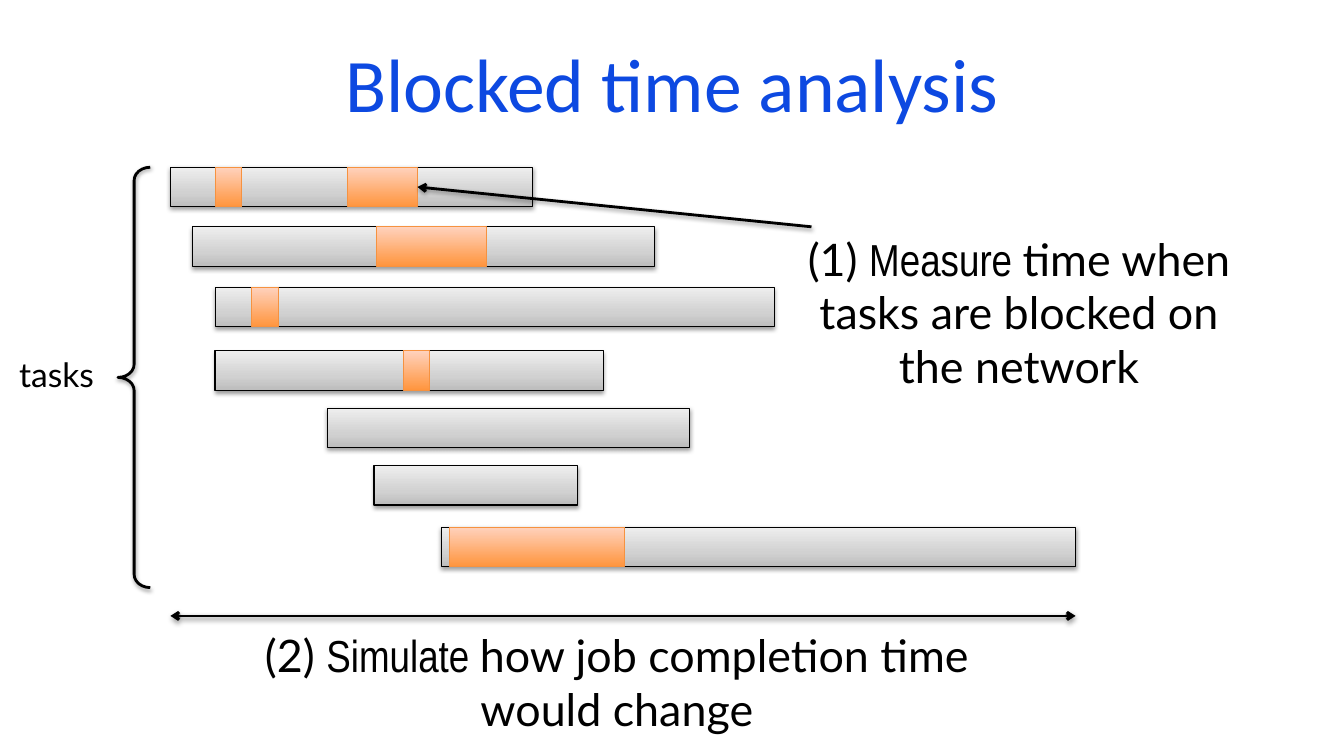
from dataclasses import dataclass

from lxml import etree
from pptx import Presentation
from pptx import util as u
from pptx.dml.color import RGBColor
from pptx.enum import shapes, text
from pptx.oxml.ns import qn

SLIDE_WIDTH, SLIDE_HEIGHT = u.Inches(13.33), u.Inches(7.5)
BAR_HEIGHT = 5.2


@dataclass(frozen=True)
class Gradient:
    stops: tuple[tuple[int, str], ...]
    outline: str


@dataclass(frozen=True)
class Theme:
    ink: str = "000000"
    title: str = "0D49E1"
    running: Gradient = Gradient(((0, "BDBDBD"), (35, "D1D1D1"), (100, "EEEEEE")), "000000")
    blocked: Gradient = Gradient(((0, "FF953E"), (100, "FFD2BD")), "F69240")
    body_font: str = "Lato"
    title_font: str = "Calibri"
    key_font: str = "Arial Narrow"
    title_size: int = 54
    body_size: int = 32
    label_size: int = 24
    thin: float = 0.75
    thick: float = 2


THEME = Theme()


@dataclass(frozen=True)
class Box:
    """A frame in percent of the slide's width and height."""
    left: float
    top: float
    width: float
    height: float


@dataclass(frozen=True)
class Span:
    left: float
    width: float


@dataclass(frozen=True)
class Task:
    top: float
    running: Span
    blocked: tuple[Span, ...] = ()


@dataclass(frozen=True)
class Label:
    box: Box
    runs: tuple[tuple[str, str], ...]
    size: int
    color: str = THEME.ink
    alignment: text.PP_ALIGN = text.PP_ALIGN.CENTER


TASKS = (
    Task(22.13, Span(12.68, 26.93), (Span(16.05, 1.95), Span(25.88, 5.18))),
    Task(30, Span(14.33, 34.35), (Span(27.98, 8.25),)),
    Task(38, Span(16.05, 41.55), (Span(18.75, 1.95),)),
    Task(46.4, Span(16, 28.88), (Span(30, 1.95),)),
    Task(54, Span(24.38, 26.93)),
    Task(61.6, Span(27.83, 15.15)),
    Task(69.73, Span(32.85, 47.18), (Span(33.45, 13.05),)),
)
TASKS_BRACE = Box(8.78, 22.13, 2.4, 55.6)
TITLE = Label(Box(5, 2.53, 90, 16.67), (("Blocked time analysis", THEME.title_font),),
              THEME.title_size, THEME.title)
MEASURE = Label(Box(58.95, 30, 33.75, 22.53),
                (("(1) ", THEME.body_font), ("Measure ", THEME.key_font),
                 ("time when tasks are blocked on the network", THEME.body_font)),
                THEME.body_size)
SIMULATE = Label(Box(15.98, 83.87, 59.85, 12.53),
                 (("(2) ", THEME.body_font), ("Simulate ", THEME.key_font),
                  ("how job completion time would change", THEME.body_font)),
                 THEME.body_size)
TASKS_LABEL = Label(Box(0.68, 44, 11.25, 10.93), (("tasks", THEME.body_font),),
                    THEME.label_size, alignment=text.PP_ALIGN.LEFT)


def across(percent: float) -> int:
    return round(SLIDE_WIDTH * percent / 100)


def down(percent: float) -> int:
    return round(SLIDE_HEIGHT * percent / 100)


def frame(box: Box) -> tuple[int, int, int, int]:
    return across(box.left), down(box.top), across(box.width), down(box.height)


def set_line(shape, color: str, width: float) -> None:
    shape.line.color.rgb = RGBColor.from_string(color)
    shape.line.width = u.Pt(width)


def add_color(parent, color: str):
    return etree.SubElement(parent, qn("a:srgbClr"), val=color)


def cast_shadow(shape) -> None:
    """Add a soft shadow just below the shape; its line must be set already."""
    effects = etree.SubElement(shape._element.spPr, qn("a:effectLst"))
    shadow = etree.SubElement(effects, qn("a:outerShdw"), blurRad=str(u.Pt(3.1)),
                              dist=str(u.Pt(1.6)), dir="5400000", rotWithShape="0")
    etree.SubElement(add_color(shadow, THEME.ink), qn("a:alpha"), val="38000")


def fill_gradient(shape, gradient: Gradient) -> None:
    shape.fill.gradient()
    shape.fill.gradient_angle = 90
    stop_list = shape._element.spPr.find(".//" + qn("a:gsLst"))
    for stop in list(stop_list):
        stop_list.remove(stop)
    for position, color in gradient.stops:
        add_color(etree.SubElement(stop_list, qn("a:gs"), pos=str(position * 1000)), color)


def add_bar(slide, top: float, span: Span, gradient: Gradient):
    bar = slide.shapes.add_shape(shapes.MSO_SHAPE.RECTANGLE,
                                 *frame(Box(span.left, top, span.width, BAR_HEIGHT)))
    fill_gradient(bar, gradient)
    set_line(bar, gradient.outline, THEME.thin)
    return bar


def add_task(slide, task: Task) -> list:
    """Draw a task and return its blocked parts."""
    cast_shadow(add_bar(slide, task.top, task.running, THEME.running))
    blocked_bars = [add_bar(slide, task.top, span, THEME.blocked) for span in task.blocked]
    for bar in blocked_bars:
        bar.shadow.inherit = False
    return blocked_bars


def add_brace(slide, box: Box) -> None:
    brace = slide.shapes.add_shape(shapes.MSO_SHAPE.LEFT_BRACE, *frame(box))
    brace.adjustments[0] = 0.408
    brace.adjustments[1] = 0.5
    brace.fill.background()
    set_line(brace, THEME.ink, THEME.thick)
    cast_shadow(brace)


def add_arrow(slide, start: tuple[float, float], end: tuple[float, float],
              ends: tuple[str, ...]):
    arrow = slide.shapes.add_connector(shapes.MSO_CONNECTOR.STRAIGHT, across(start[0]),
                                       down(start[1]), across(end[0]), down(end[1]))
    set_line(arrow, THEME.ink, THEME.thick)
    for line_end in ends:
        etree.SubElement(arrow.line._get_or_add_ln(), qn(line_end), type="arrow")
    cast_shadow(arrow)
    return arrow


def add_label(slide, label: Label) -> None:
    text_frame = slide.shapes.add_textbox(*frame(label.box)).text_frame
    text_frame.word_wrap = True
    text_frame.vertical_anchor = text.MSO_ANCHOR.MIDDLE
    paragraph = text_frame.paragraphs[0]
    paragraph.alignment = label.alignment
    for words, font_name in label.runs:
        run = paragraph.add_run()
        run.text = words
        run.font.name = font_name
        run.font.size = u.Pt(label.size)
        run.font.color.rgb = RGBColor.from_string(label.color)


def main() -> None:
    presentation = Presentation()
    presentation.slide_width, presentation.slide_height = SLIDE_WIDTH, SLIDE_HEIGHT
    slide = presentation.slides.add_slide(presentation.slide_layouts[6])

    blocked_bars = [bar for task in TASKS for bar in add_task(slide, task)]
    add_brace(slide, TASKS_BRACE)
    add_arrow(slide, (12.68, 81.47), (80.03, 81.47), ("a:headEnd", "a:tailEnd"))
    for label in (TITLE, SIMULATE, MEASURE, TASKS_LABEL):
        add_label(slide, label)
    pointer = add_arrow(slide, (60.38, 30), (31.06, 24.73), ("a:tailEnd",))
    pointer.end_connect(blocked_bars[1], 3)

    presentation.save("out.pptx")


if __name__ == "__main__":
    main()
